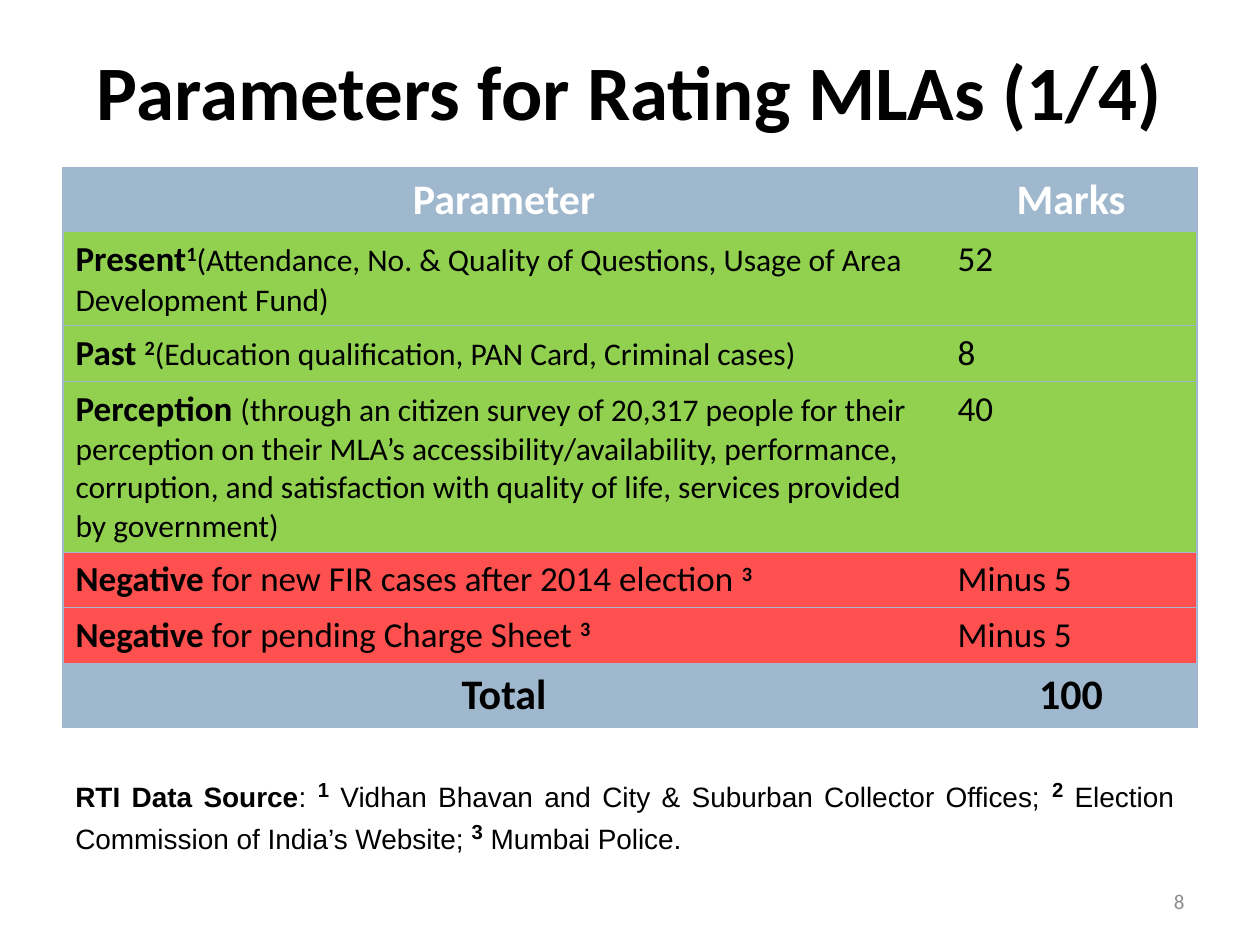
from dataclasses import dataclass

from lxml import etree
from pptx import Presentation
from pptx import util as u
from pptx.dml.color import RGBColor
from pptx.enum import text as t
from pptx.oxml import ns


@dataclass(frozen=True)
class Theme:
    """Colours, fonts and type sizes of the slide."""
    ink: str = "000000"
    pale: str = "FFFFFF"
    grey: str = "8C8C8C"
    steel: str = "9FB8CD"
    green: str = "92D050"
    red: str = "FF5050"
    sans: str = "Calibri"
    note: str = "Arial"
    title: int = 44
    head: int = 24
    lead: int = 20
    body: int = 18
    foot: int = 16
    page: int = 12


T = Theme()
GRID = (120, 90)
SIZE = (u.Inches(10), u.Inches(7.5))
PLAIN = "{2D5ABB26-0587-4C30-8999-92F81FD0307C}"
ALIGN = t.PP_ALIGN


def span(n, axis=0):
    """Turn grid columns (axis 0) or rows (axis 1) into a length."""
    return u.Emu(round(n * SIZE[axis] / GRID[axis]))


def place(box):
    """Turn a box in grid units into left, top, width and height."""
    return [span(n, i % 2) for i, n in enumerate(box)]


def write(frame, runs, align=ALIGN.LEFT, face=T.sans, ink=T.ink):
    """Fill a frame with one paragraph of (text, size, bold, raised) runs."""
    para = frame.paragraphs[0]
    para.alignment = align
    for words, size, bold, *high in runs:
        run = para.add_run()
        run.text = words
        form = {"name": face, "size": u.Pt(size), "bold": bold}
        for key, val in form.items():
            setattr(run.font, key, val)
        run.font.color.rgb = RGBColor.from_string(ink)
        if high:
            run.font._element.set("baseline", "30000")


def edge(cell, sides):
    """Draw thin steel borders on the given sides of a cell."""
    props = cell._tc.get_or_add_tcPr()
    for side in sides:
        line = etree.SubElement(props, ns.qn(f"a:ln{side}"), w=str(u.Pt(0.75)))
        fill = etree.SubElement(line, ns.qn("a:solidFill"))
        etree.SubElement(fill, ns.qn("a:srgbClr"), val=T.steel)


def title(slide, box, words):
    """Set the title placeholder in its box."""
    shape = slide.shapes.title
    shape.left, shape.top, shape.width, shape.height = place(box)
    shape.text_frame.vertical_anchor = t.MSO_ANCHOR.MIDDLE
    write(shape.text_frame, [(words, T.title, True)], ALIGN.CENTER)


def label(slide, box, runs, anchor=t.MSO_ANCHOR.TOP, **form):
    """Place a wrapped text box."""
    frame = slide.shapes.add_textbox(*place(box)).text_frame
    frame.word_wrap = True
    frame.vertical_anchor = anchor
    write(frame, runs, **form)


def marks(slide, box, cols, rows):
    """Place the marks table; each row has height, fill, ink, align and cells."""
    shape = slide.shapes.add_table(len(rows), len(cols), *place(box))
    table = shape.table
    table.first_row = table.horz_banding = False
    table._tbl.tblPr.find(ns.qn("a:tableStyleId")).text = PLAIN
    for col, width in zip(table.columns, cols):
        col.width = span(width)
    for r, (height, fill, ink, align, cells) in enumerate(rows):
        table.rows[r].height = span(height, 1)
        for c, runs in enumerate(cells):
            cell = table.cell(r, c)
            edge(cell, "RTB" if c else "LTB")
            cell.fill.solid()
            cell.fill.fore_color.rgb = RGBColor.from_string(fill)
            write(cell.text_frame, runs, align, ink=ink)


def band(left, right, ink):
    """Describe a centred heading or total row."""
    cells = [[(words, T.head, True)] for words in (left, right)]
    return 6, T.steel, ink, ALIGN.CENTER, cells


def item(height, fill, runs, mark):
    """Describe a row for one parameter and its marks."""
    return height, fill, T.ink, ALIGN.LEFT, [runs, [(mark, T.lead, False)]]


def minus(words):
    """Describe a row that takes marks away."""
    runs = [("Negative", T.lead, True), (words, T.lead, False),
            ("3", T.lead, True, True)]
    return item(5.2, T.red, runs, "Minus 5")


def main():
    """Build and save the slide."""
    deck = Presentation()
    deck.slide_width, deck.slide_height = SIZE
    slide = deck.slides.add_slide(deck.slide_layouts[5])
    title(slide, (6, 1, 108, 15), "Parameters for Rating MLAs (1/4)")
    rows = [
        band("Parameter", "Marks", T.pale),
        item(8.8, T.green, [
            ("Present", T.lead, True), ("1", T.lead, True, True),
            ("(Attendance, No. & Quality of Questions, Usage of Area "
             "Development Fund)", T.body, False)], "52"),
        item(5.2, T.green, [
            ("Past ", T.lead, True), ("2", T.lead, True, True),
            ("(Education qualification, PAN Card, Criminal cases)",
             T.body, False)], "8"),
        item(16, T.green, [
            ("Perception ", T.lead, True),
            ("(through an citizen survey of 20,317 people for their "
             "perception on their MLA’s accessibility/availability, "
             "performance, corruption, and satisfaction with quality of "
             "life, services provided by government)", T.body, False)], "40"),
        minus(" for new FIR cases after 2014 election "),
        minus(" for pending Charge Sheet "),
        band("Total", "100", T.ink),
    ]
    marks(slide, (6, 16, 108, 52.4), (84, 24), rows)
    source = [("RTI Data Source", T.foot, True), (": ", T.foot, False)]
    notes = (" Vidhan Bhavan and City & Suburban Collector Offices; ",
             " Election Commission of India’s Website; ", " Mumbai Police.")
    for n, words in enumerate(notes, 1):
        source += [(str(n), T.lead, True, True), (words, T.foot, False)]
    label(slide, (6, 73, 107, 7.7), source, align=ALIGN.JUSTIFY, face=T.note)
    label(slide, (86, 83.4, 28, 4.8), [("8", T.page, False)],
          t.MSO_ANCHOR.MIDDLE, align=ALIGN.RIGHT, ink=T.grey)
    deck.save("out.pptx")


if __name__ == "__main__":
    main()
